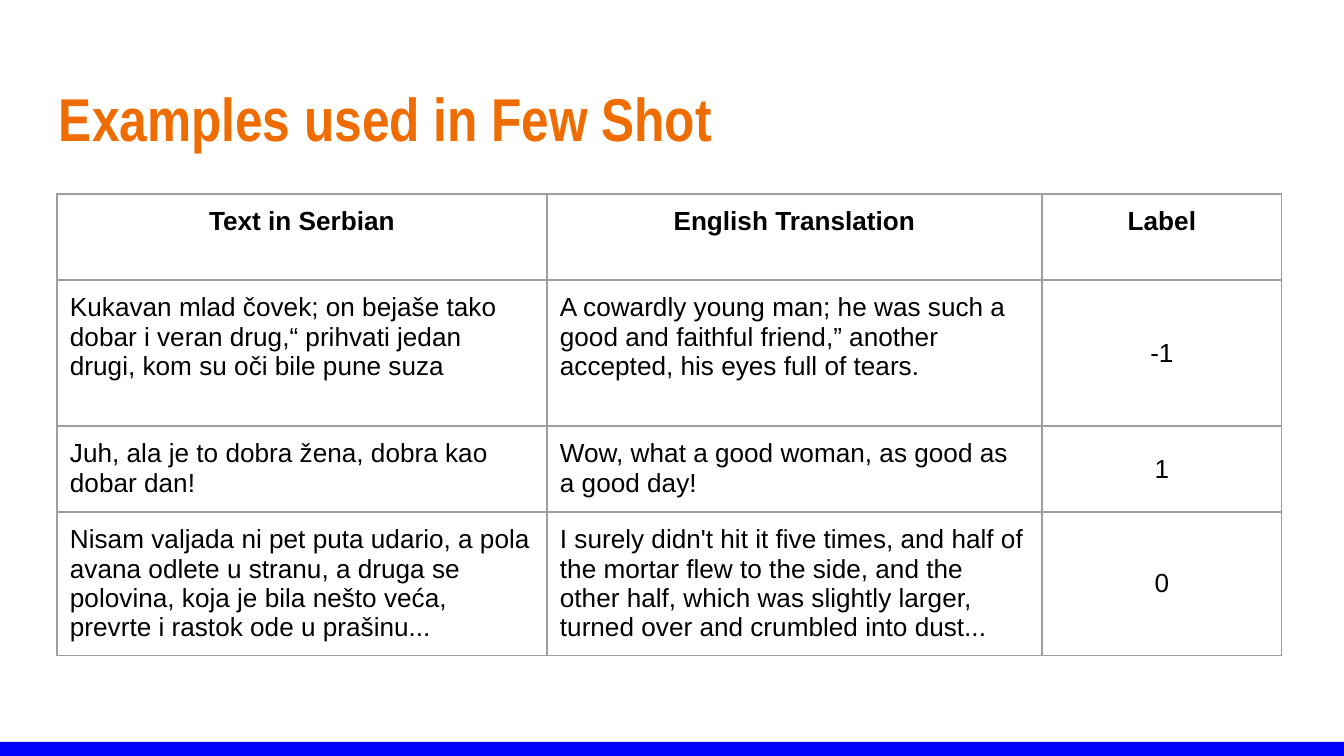
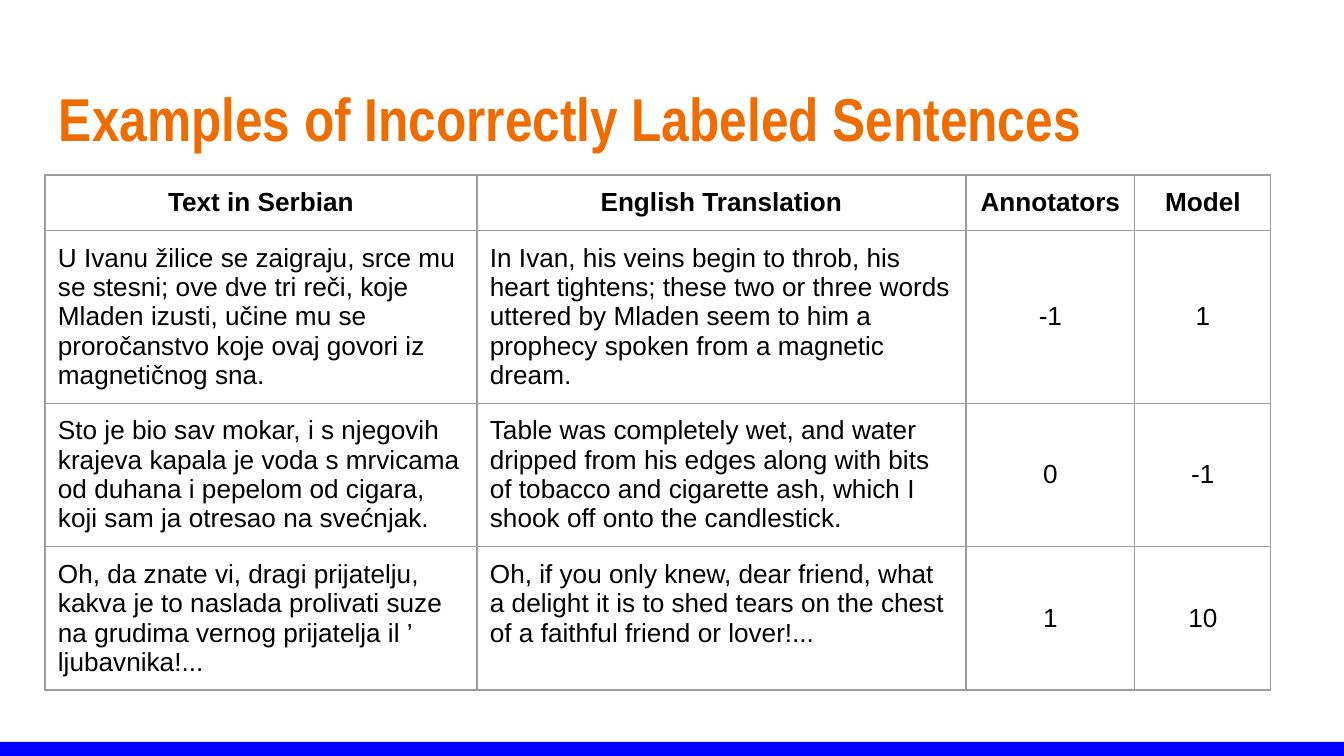
import pptx
import pptx.dml.color
import pptx.enum.shapes
import pptx.enum.text
import pptx.oxml
import pptx.oxml.ns
import pptx.util

ORANGE = pptx.dml.color.RGBColor(0xEF, 0x6C, 0x00)
BLUE = pptx.dml.color.RGBColor(0x00, 0x00, 0xFF)
GREY = pptx.dml.color.RGBColor(0x9E, 0x9E, 0x9E)
BLACK = pptx.dml.color.RGBColor(0x00, 0x00, 0x00)

ALIGN = pptx.enum.text.PP_ALIGN
ANCHOR = pptx.enum.text.MSO_ANCHOR
TITLE_ONLY = 5
SLIDE_WIDTH, SLIDE_HEIGHT, BAND_HEIGHT = 1344, 756, 14
INSET = 13
TEXT_COLUMNS = 2

TITLE_FONT = {"name": "Arial Narrow", "size": pptx.util.Pt(32.4), "bold": True}
HEADER_FONT = {"name": "Arial", "size": pptx.util.Pt(14), "bold": True}
BODY_FONT = {**HEADER_FONT, "bold": False}

FEW_SHOT = [
    ("Text in Serbian", "English Translation", "Label"),
    ("Kukavan mlad čovek; on bejaše tako dobar i veran drug,“ prihvati jedan drugi, "
     "kom su oči bile pune suza",
     "A cowardly young man; he was such a good and faithful friend,” another accepted, "
     "his eyes full of tears.", "-1"),
    ("Juh, ala je to dobra žena, dobra kao dobar dan!",
     "Wow, what a good woman, as good as a good day!", "1"),
    ("Nisam valjada ni pet puta udario, a pola avana odlete u stranu, a druga se "
     "polovina, koja je bila nešto veća, prevrte i rastok ode u prašinu...",
     "I surely didn't hit it five times, and half of the mortar flew to the side, and "
     "the other half, which was slightly larger, turned over and crumbled into dust...",
     "0"),
]
MISLABELED = [
    ("Text in Serbian", "English Translation", "Annotators", "Model"),
    ("U Ivanu žilice se zaigraju, srce mu se stesni; ove dve tri reči, koje Mladen "
     "izusti, učine mu se proročanstvo koje ovaj govori iz magnetičnog sna.",
     "In Ivan, his veins begin to throb, his heart tightens; these two or three words "
     "uttered by Mladen seem to him a prophecy spoken from a magnetic dream.", "-1", "1"),
    ("Sto je bio sav mokar, i s njegovih krajeva kapala je voda s mrvicama od duhana i "
     "pepelom od cigara, koji sam ja otresao na svećnjak.",
     "Table was completely wet, and water dripped from his edges along with bits of "
     "tobacco and cigarette ash, which I shook off onto the candlestick.", "0", "-1"),
    ("Oh, da znate vi, dragi prijatelju, kakva je to naslada prolivati suze na grudima "
     "vernog prijatelja il ’ ljubavnika!...",
     "Oh, if you only knew, dear friend, what a delight it is to shed tears on the chest "
     "of a faithful friend or lover!...", "1", "10"),
]


def px(length):
    """Convert pixels to EMU at 134.4 pixels to the inch."""
    return round(length * 914400 / 134.4)


def set_attributes(target, values):
    """Set every attribute named in a dict of format values."""
    for name, value in values.items():
        setattr(target, name, value)


def write(frame, text, font, color, alignment):
    """Write one formatted paragraph into a text frame."""
    frame.word_wrap = True
    paragraph = frame.paragraphs[0]
    paragraph.text = text
    paragraph.alignment = alignment
    run_font = paragraph.runs[0].font
    set_attributes(run_font, font)
    run_font.color.rgb = color


def add_band(slide):
    """Draw the blue band along the foot of the slide."""
    band = slide.shapes.add_shape(
        pptx.enum.shapes.MSO_SHAPE.RECTANGLE, 0, px(SLIDE_HEIGHT - BAND_HEIGHT),
        px(SLIDE_WIDTH), px(BAND_HEIGHT))
    band.shadow.inherit = False
    band.fill.solid()
    band.fill.fore_color.rgb = BLUE
    band.line.fill.background()


def add_title(slide, text):
    """Place and fill the title placeholder."""
    title = slide.shapes.title
    set_attributes(title, {"left": px(46), "top": px(66),
                           "width": px(1252), "height": px(103)})
    frame = title.text_frame
    margins = {f"margin_{side}": px(INSET) for side in ("left", "top", "right", "bottom")}
    set_attributes(frame, {**margins, "vertical_anchor": ANCHOR.MIDDLE,
                           "auto_size": pptx.enum.text.MSO_AUTO_SIZE.NONE})
    write(frame, text, TITLE_FONT, ORANGE, ALIGN.LEFT)


def add_borders(cell):
    """Give a cell thin grey lines on all four sides."""
    properties = cell._tc.get_or_add_tcPr()
    for side in "LRTB":
        properties.append(pptx.oxml.parse_xml(
            f'<a:ln{side} {pptx.oxml.ns.nsdecls("a")} w="{pptx.util.Pt(0.75)}">'
            f'<a:solidFill><a:srgbClr val="{GREY}"/></a:solidFill></a:ln{side}>'))


def fill_cell(cell, text, is_header, is_label):
    """Write and format one cell by its role in the table."""
    margins = {f"margin_{side}": px(INSET) for side in ("left", "top", "right", "bottom")}
    set_attributes(cell, margins)
    cell.vertical_anchor = ANCHOR.MIDDLE if is_label and not is_header else ANCHOR.TOP
    write(cell.text_frame, text, HEADER_FONT if is_header else BODY_FONT, BLACK,
          ALIGN.CENTER if is_header or is_label else ALIGN.LEFT)
    add_borders(cell)
    cell.fill.background()


def add_examples(slide, left, top, widths, heights, examples):
    """Add a table of example sentences and their labels."""
    table = slide.shapes.add_table(
        len(heights), len(widths), px(left), px(top),
        px(sum(widths)), px(sum(heights))).table
    set_attributes(table, {"first_row": False, "horz_banding": False})
    for column, width in zip(table.columns, widths):
        column.width = px(width)
    for row, height in zip(table.rows, heights):
        row.height = px(height)
    for row_index, example in enumerate(examples):
        for column_index, text in enumerate(example):
            fill_cell(table.cell(row_index, column_index), text,
                      row_index == 0, column_index >= TEXT_COLUMNS)


def add_example_slide(deck, title, **layout):
    """Add a slide with the shared band, a title and an example table."""
    slide = deck.slides.add_slide(deck.slide_layouts[TITLE_ONLY])
    add_band(slide)
    add_title(slide, title)
    add_examples(slide, **layout)


def main():
    """Build and save the deck."""
    deck = pptx.Presentation()
    set_attributes(deck, {"slide_width": px(SLIDE_WIDTH), "slide_height": px(SLIDE_HEIGHT)})
    add_example_slide(deck, "Examples used in Few Shot", left=57, top=194,
                      widths=(490, 495, 240), heights=(86, 146, 86, 86),
                      examples=FEW_SHOT)
    add_example_slide(deck, "Examples of Incorrectly Labeled Sentences", left=45, top=175,
                      widths=(432, 489, 169, 136), heights=(42, 133, 133, 133),
                      examples=MISLABELED)
    deck.save("out.pptx")


if __name__ == "__main__":
    main()
